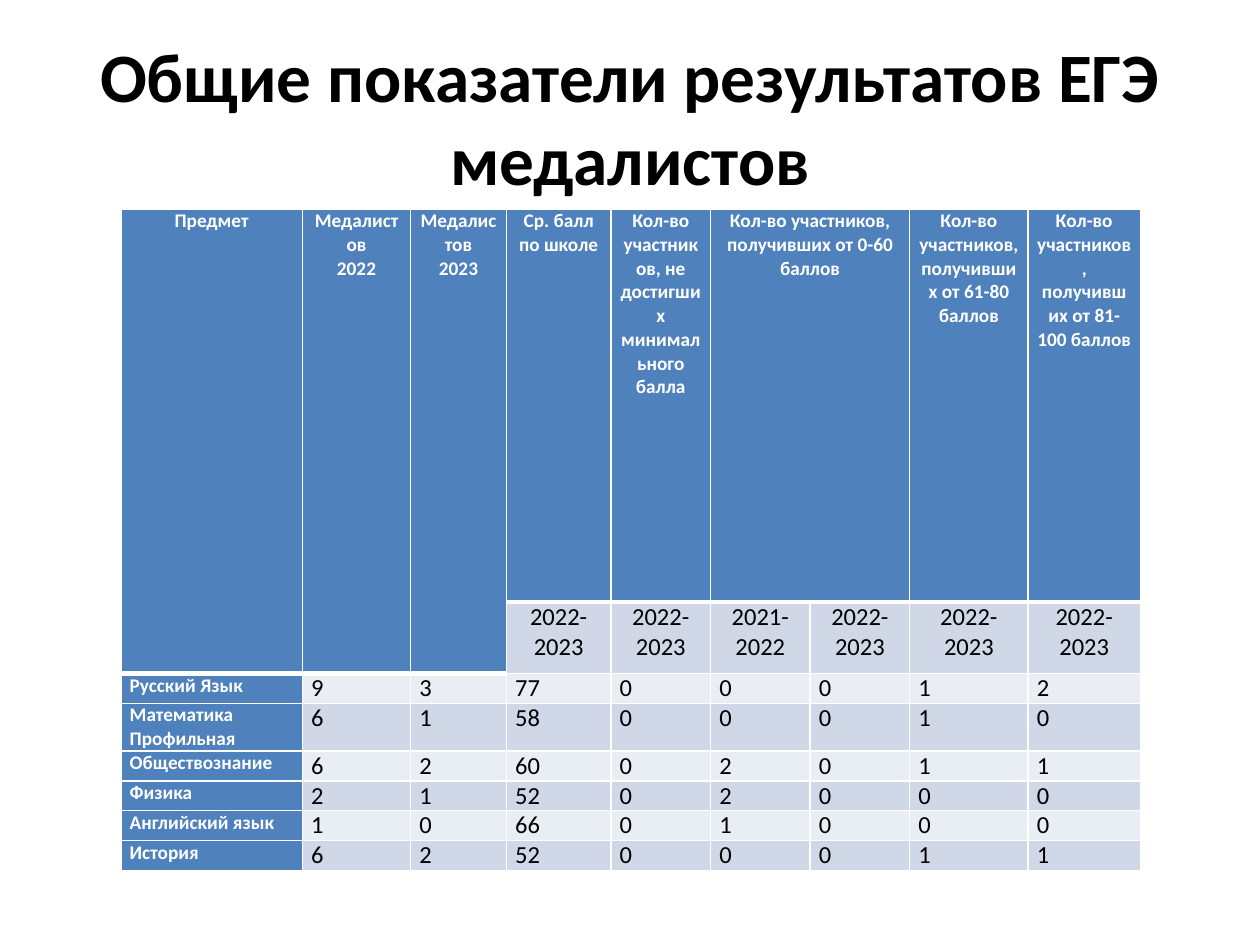
from lxml import etree
from pptx import Presentation
from pptx.dml.color import RGBColor
from pptx.enum.text import MSO_ANCHOR, PP_ALIGN
from pptx.oxml.ns import qn
from pptx.util import Pt

CENTER = PP_ALIGN.CENTER
JUSTIFY = PP_ALIGN.JUSTIFY
MIDDLE = MSO_ANCHOR.MIDDLE
FONT = "Calibri"
COLORS = {"head": "4F81BD", "dark": "D0D8E8", "light": "E9EDF4",
          "white": "FFFFFF", "black": "000000"}

HEADS = [
    "Предмет", "Медалистов\n2022", "Медалистов\n2023", "Ср. балл по школе",
    "Кол-во участников, не достигших минимального балла",
    "Кол-во участников, получивших от 0-60 баллов", "",
    "Кол-во участников, получивших от 61-80 баллов",
    "Кол-во участников, получивших от 81-100 баллов",
]
YEARS = ["", "", "", "2022-\n2023", "2022-2023", "2021-2022", "2022-2023",
         "2022-\n2023", "2022-\n2023"]
MARKS = [
    ["Русский Язык", 9, 3, 77, 0, 0, 0, 1, 2],
    ["Математика Профильная", 6, 1, 58, 0, 0, 0, 1, 0],
    ["Обществознание", 6, 2, 60, 0, 2, 0, 1, 1],
    ["Физика", 2, 1, 52, 0, 2, 0, 0, 0],
    ["Английский язык", 1, 0, 66, 0, 1, 0, 0, 0],
    ["История", 6, 2, 52, 0, 0, 0, 1, 1],
]
WIDTHS = [103.7, 61.9, 54.7, 59.8, 56.9, 56.9, 56.9, 67.7, 64.1]
HEIGHTS = [224.6, 39.6, 13, 26.6, 13, 13, 13, 13]
MERGES = [(0, 0, 1, 0), (0, 1, 1, 1), (0, 2, 1, 2), (0, 5, 0, 6)]


def write(frame, text, size=14, color="black", bold=False, align=JUSTIFY):
    frame.text = text
    for para in frame.paragraphs:
        para.alignment = align
        for run in para.runs:
            run.font.name = FONT
            run.font.size = Pt(size)
            run.font.bold = bold
            run.font.color.rgb = RGBColor.from_string(COLORS[color])


class Deck:
    def __init__(self, wide, high):
        self.file = Presentation()
        self.file.slide_width = Pt(wide)
        self.file.slide_height = Pt(high)
        self.slide = self.file.slides.add_slide(self.file.slide_layouts[5])

    def title(self, text, left, top, wide, high):
        box = self.slide.shapes.title
        box.left, box.top, box.width, box.height = map(Pt, (left, top, wide, high))
        box.text_frame.vertical_anchor = MIDDLE
        write(box.text_frame, text, size=39.6, bold=True, align=CENTER)

    def border(self, cell, side, width):
        props = cell._tc.get_or_add_tcPr()
        line = etree.SubElement(props, qn("a:ln" + side), w=str(Pt(width)))
        fill = etree.SubElement(line, qn("a:solidFill"))
        etree.SubElement(fill, qn("a:srgbClr"), val=COLORS["white"])

    def cell(self, cell, text, fill, base, **form):
        cell.margin_left = cell.margin_right = Pt(5)
        cell.margin_top = cell.margin_bottom = 0
        for side in "LRTB":
            self.border(cell, side, base if side == "B" else 1)
        cell.fill.solid()
        cell.fill.fore_color.rgb = RGBColor.from_string(COLORS[fill])
        if text:
            write(cell.text_frame, text, **form)

    def table(self, rows, left, top):
        grid = self.slide.shapes.add_table(
            len(rows), len(WIDTHS), Pt(left), Pt(top),
            Pt(sum(WIDTHS)), Pt(sum(HEIGHTS))).table
        for col, width in zip(grid.columns, WIDTHS):
            col.width = Pt(width)
        for row, height in zip(grid.rows, HEIGHTS):
            row.height = Pt(height)
        for r1, c1, r2, c2 in MERGES:
            grid.cell(r1, c1).merge(grid.cell(r2, c2))
        for r, row in enumerate(rows):
            for c, item in enumerate(row):
                head = r == 0 or (r == 1 and c < 3)
                label = head or c == 0
                form = {"align": CENTER if r < 2 else JUSTIFY}
                if label:
                    form.update(size=11, color="white", bold=True)
                band = "dark" if r % 2 else "light"
                self.cell(grid.cell(r, c), str(item), "head" if label else band,
                          3 if head else 1, **form)


def main():
    deck = Deck(720, 540)
    deck.title("Общие показатели результатов ЕГЭ медалистов", 36, 21.6, 648, 90)
    deck.table([HEADS, YEARS] + MARKS, 69.1, 119.5)
    deck.file.save("out.pptx")


if __name__ == "__main__":
    main()
